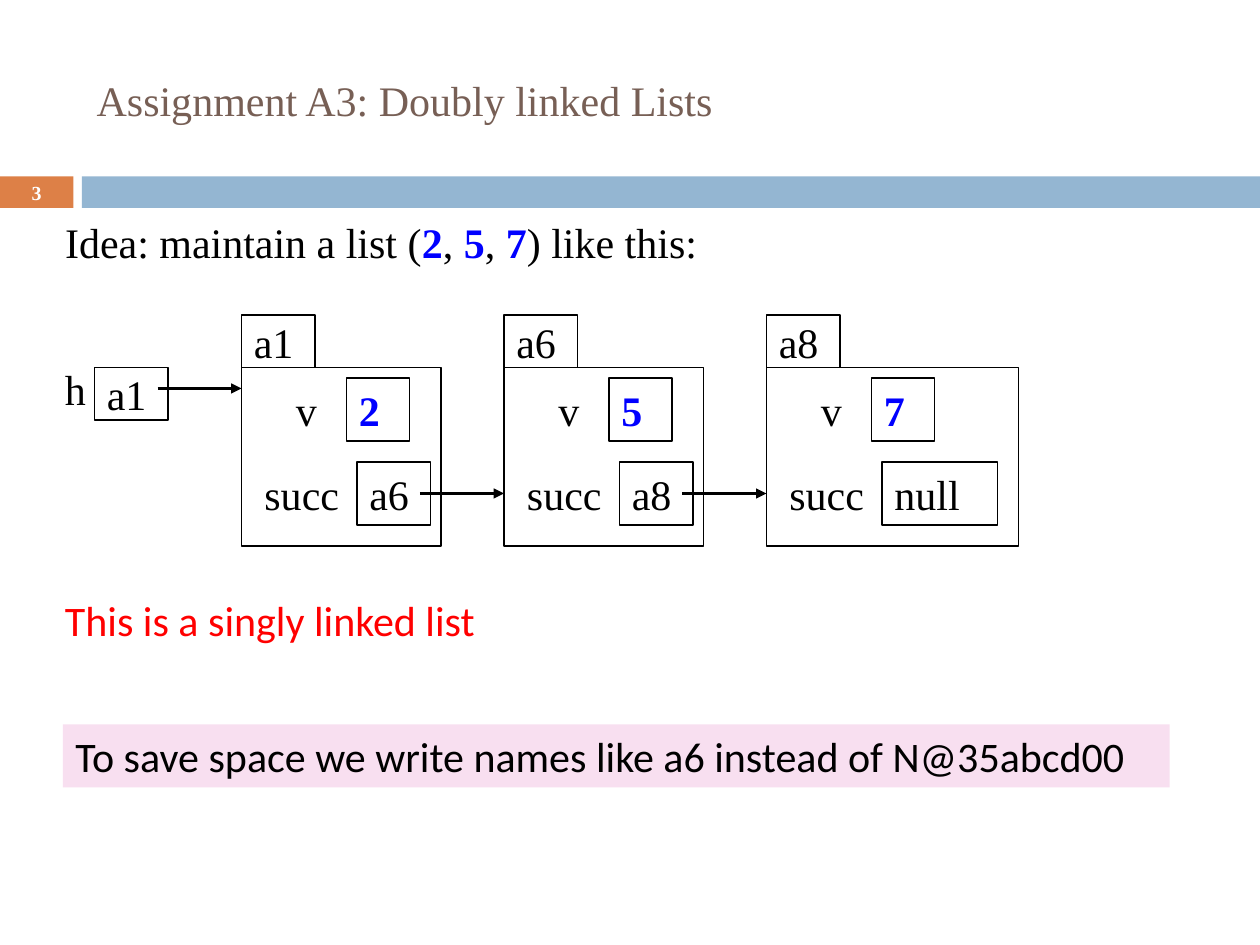
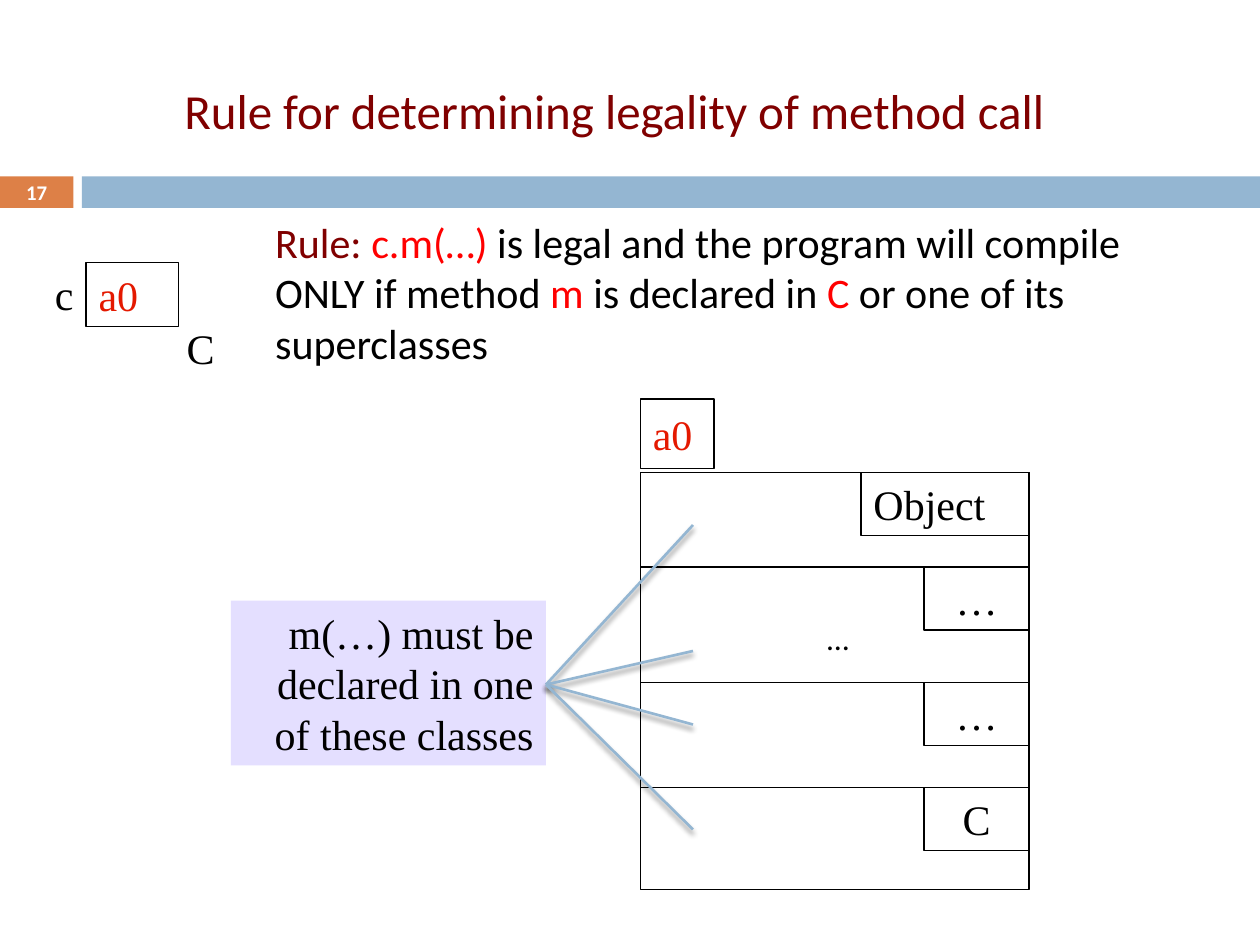
"""Build two lecture slides on linked lists and legal method calls."""
from dataclasses import dataclass

from lxml import etree
from pptx import Presentation
from pptx.dml.color import RGBColor
from pptx.enum.shapes import MSO_CONNECTOR, MSO_SHAPE
from pptx.enum.text import MSO_ANCHOR, MSO_AUTO_SIZE, PP_ALIGN
from pptx.oxml.ns import qn
from pptx.util import Inches, Pt

RECT = MSO_SHAPE.RECTANGLE
LINE = MSO_CONNECTOR.STRAIGHT
LEFT, MID, RIGHT = PP_ALIGN.LEFT, PP_ALIGN.CENTER, PP_ALIGN.RIGHT
TOP, CORE = MSO_ANCHOR.TOP, MSO_ANCHOR.MIDDLE
FIXED = MSO_AUTO_SIZE.NONE


@dataclass(frozen=True)
class Theme:
    """Colours, fonts and type sizes."""
    black: str = "000000"
    white: str = "FFFFFF"
    brown: str = "775F55"
    wine: str = "800000"
    red: str = "FF0000"
    brick: str = "E41900"
    blue: str = "0000FF"
    sky: str = "94B6D2"
    rust: str = "DD8047"
    pink: str = "F8DFF0"
    lilac: str = "E4DFFF"
    serif: str = "Times New Roman"
    sans: str = "Calibri"
    head: float = 28
    base: float = 24
    dots: float = 18
    hair: float = 0.75
    fan: float = 1.5
    arrow: float = 1.75


T = Theme()
BOLD = (T.blue, T.white)

deck = Presentation()
deck.slide_width, deck.slide_height = Inches(10), Inches(7.5)
COL, ROW = deck.slide_width / 120, deck.slide_height / 90
base = deck.slide_layouts[1]


def box(home, area, text="", tint=T.black, font=T.serif, size=T.base,
        align=LEFT, anchor=CORE, fill=None, edge=False, holder=None):
    """Place a box on the grid; text is a string or (text, colour) parts."""
    x, y, w, h = area
    place = [round(x * COL), round(y * ROW), round(w * COL), round(h * ROW)]
    if holder is not None:
        shape = holder
        shape.left, shape.top, shape.width, shape.height = place
    elif fill or edge:
        shape = home.add_shape(RECT, *place)
        shape.shadow.inherit = False
        shape.fill.background()
        shape.line.fill.background()
        if fill:
            shape.fill.solid()
            shape.fill.fore_color.rgb = RGBColor.from_string(fill)
        if edge:
            shape.line.color.rgb = RGBColor.from_string(T.black)
            shape.line.width = Pt(T.hair)
    else:
        shape = home.add_textbox(*place)
    frame = shape.text_frame
    frame.word_wrap, frame.auto_size = True, FIXED
    frame.vertical_anchor = anchor
    para = frame.paragraphs[0]
    para.alignment, para.space_before = align, Pt(0)
    for words, hue in [(text, tint)] if isinstance(text, str) else text:
        run = para.add_run()
        run.text = words
        run.font.name, run.font.size = font, Pt(size)
        run.font.bold = hue in BOLD
        run.font.color.rgb = RGBColor.from_string(hue)
    return shape


def link(home, start, end, tint=T.black, width=T.hair, tip=False, shade=False):
    """Draw a line between two grid points."""
    ends = [round(n * unit) for n, unit in zip(start + end, (COL, ROW) * 2)]
    wire = home.add_connector(LINE, *ends)
    wire.line.color.rgb = RGBColor.from_string(tint)
    wire.line.width = Pt(width)
    props = wire.element.spPr
    if tip:
        etree.SubElement(props.find(qn("a:ln")), qn("a:tailEnd"), type="triangle")
    glow = etree.SubElement(props, qn("a:effectLst"))
    if shade:
        cast = etree.SubElement(glow, qn("a:outerShdw"), blurRad=str(Pt(3)),
                                dist=str(Pt(2.4)), dir="5400000", rotWithShape="0")
        dark = etree.SubElement(cast, qn("a:srgbClr"), val=T.black)
        etree.SubElement(dark, qn("a:alpha"), val="45000")


idea = [("Idea: maintain a list (", T.black), ("2", T.blue), (", ", T.black),
        ("5", T.blue), (", ", T.black), ("7", T.blue), (") like this:", T.black)]
rule = [("Rule: ", T.wine), ("c.m(…) ", T.red),
        ("is legal and the program will compile ONLY if method ", T.black),
        ("m", T.red), (" is declared in ", T.black), ("C", T.red),
        (" or one of its superclasses", T.black)]
plans = [
    ("Assignment A3: Doubly linked Lists", (8, 3, 107, 13), T.brown, T.serif,
     T.base, LEFT, "3", 11.4, idea, (5, 20, 107, 10)),
    ("Rule for determining legality of method call", (11, 4, 95, 13), T.wine, T.sans,
     T.head, MID, "17", 11.9, rule, (25, 20, 89, 15.7)),
]
pages = []
for name, spot, tint, font, size, align, num, small, lead, area in plans:
    slide = deck.slides.add_slide(base)
    home = slide.shapes
    if not pages:
        for at, (x, w, hue) in enumerate([(0, 7, T.rust), (7.8, 112.2, T.sky)], 2):
            band = box(home, (x, 16.8, w, 3), fill=hue)
            base.shapes.element.insert(at, band.element)
    box(home, spot, name, tint, font, size, align, holder=home.title)
    box(home, (0, 16.7, 7, 3.2), num, T.white, font, small, MID)
    body = box(home, area, lead, font=font, anchor=TOP, holder=slide.placeholders[1])
    props = body.text_frame.paragraphs[0]._p.get_or_add_pPr()
    props.set("marL", "0")
    props.set("indent", "0")
    etree.SubElement(props, qn("a:buNone"))
    pages.append(home)

chain, call = pages

box(chain, (5, 34, 4.4, 6), "h")
box(chain, (9, 35, 7, 5), "a1", edge=True)
link(chain, (15, 37), (23, 37), width=T.arrow, tip=True)
nodes = [("a1", "2", "a6", 19, 7), ("a6", "5", "a8", 19, 7), ("a8", "7", "null", 24, 11)]
for i, (tag, val, succ, wide, slot) in enumerate(nodes):
    x = 23 + 25 * i
    node = chain.add_group_shape().shapes
    box(node, (x, 35, wide, 17), edge=True)
    box(node, (x, 30, 7, 5), tag, edge=True)
    box(node, (x + 4, 36, 5, 6), "v")
    box(node, (x + 10, 36, 6, 6), val, T.blue, edge=True)
    box(node, (x + 1, 44, 10, 6), "succ")
    box(node, (x + 11, 44, slot, 6), succ, edge=True)
    if succ != "null":
        link(chain, (x + 17, 47), (x + 25, 47), width=T.arrow, tip=True)
box(chain, (5, 56, 64, 6), "This is a singly linked list", T.red, T.sans)
box(chain, (6, 69, 105.4, 6),
    "To save space we write names like a6 instead of N@35abcd00",
    font=T.sans, fill=T.pink)

var = call.add_group_shape().shapes
box(var, (2, 25, 6.2, 6), "c", align=RIGHT)
box(var, (8.2, 25, 8.8, 6.1), "a0", T.brick, edge=True)
box(var, (16.6, 30.1, 6, 6), "C")

thing = call.add_group_shape().shapes
box(thing, (61, 45, 37, 39.7), edge=True)
box(thing, (61, 38, 7, 6.6), "a0", T.brick, edge=True)
box(thing, (82, 45, 16, 6), "Object", edge=True)
for y, kind in [(54, "…"), (65, "…"), (75, "C")]:
    link(thing, (61, y), (90, y))
    box(thing, (88, y, 10, 6), kind, align=MID, edge=True)
box(thing, (77.6, 58.4, 5.4, 4.8), "…", font=T.sans, size=T.dots)
box(call, (22, 57.2, 30, 15.7), "m(…) must be declared in one of these classes",
    align=RIGHT, fill=T.lilac)
for y in (50, 62, 69, 79):
    link(call, (52, 65.2), (66, y), T.sky, T.fan, shade=True)

deck.save("out.pptx")
